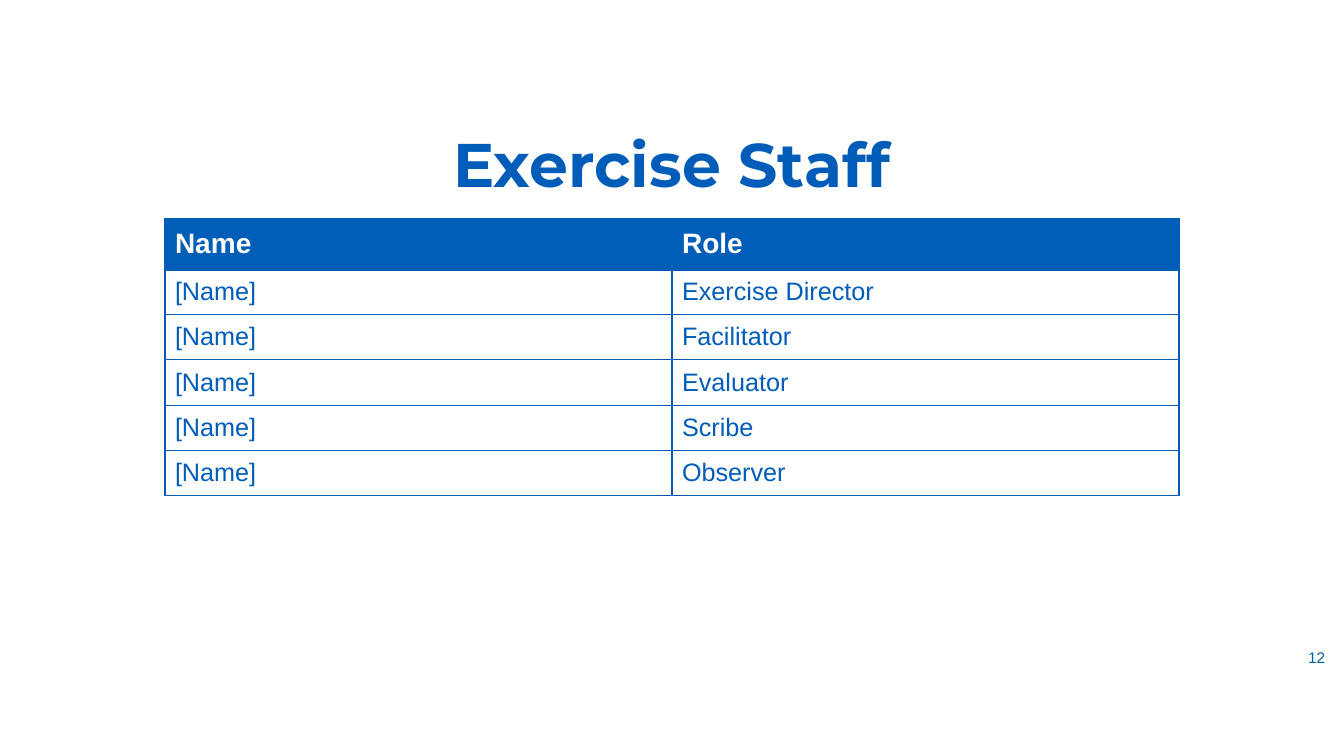
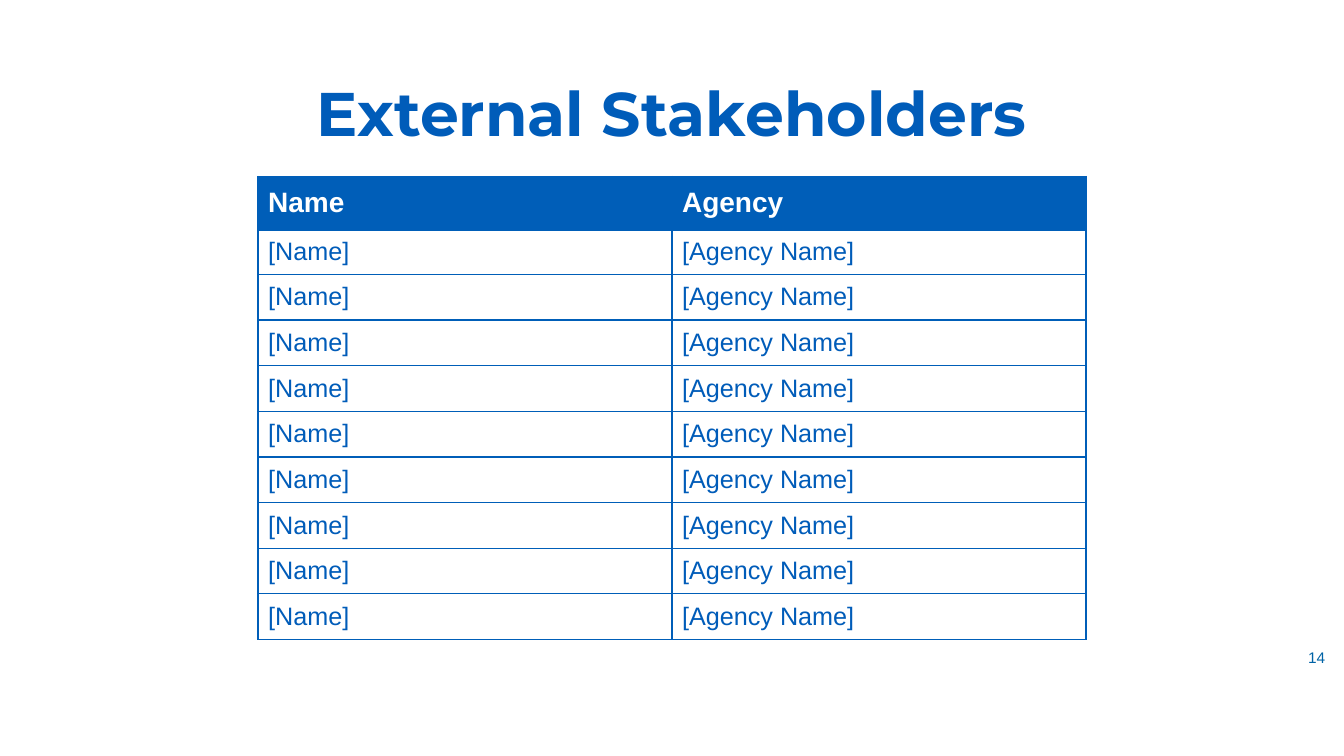
import pptx
import pptx.util
import pptx.dml.color
import pptx.enum.text
import pptx.oxml
import pptx.oxml.ns

Pt = pptx.util.Pt
Align = pptx.enum.text.PP_ALIGN
Anchor = pptx.enum.text.MSO_ANCHOR
WIDE, HIGH = 960, 540
HUES = {"line": "005EB8", "text": "005CB9", "page": "0063A6", "white": "FFFFFF"}


def hue(name):
    return pptx.dml.color.RGBColor.from_string(HUES[name])


class Deck:
    """Holds the shared style and the current slide."""

    head, body = "Montserrat", "Arial"

    def __init__(self):
        self.file = pptx.Presentation()
        self.file.slide_width, self.file.slide_height = Pt(WIDE), Pt(HIGH)
        self.slide = None

    def font(self, para, name, size, color, bold=False):
        font = para.font
        font.name, font.size, font.bold = name, Pt(size), bold
        font.color.rgb = hue(color)

    # New slide with its title and page number
    def start(self, title, top, high, page):
        self.slide = self.file.slides.add_slide(self.file.slide_layouts[5])
        box = self.slide.shapes.title
        box.left, box.top, box.width, box.height = Pt(66), Pt(top), Pt(828), Pt(high)
        para = self.fill(box.text_frame, title)
        para.line_spacing = 0.9
        self.font(para, self.head, 44, "text", True)
        self.number(page)

    def number(self, page):
        box = self.slide.shapes.add_textbox(Pt(921), Pt(454.5), Pt(39), Pt(29.5))
        para = self.fill(box.text_frame, str(page))
        self.font(para, self.body, 11, "page")

    def fill(self, frame, text):
        frame.text = text
        frame.word_wrap = True
        frame.auto_size = pptx.enum.text.MSO_AUTO_SIZE.NONE
        frame.vertical_anchor = Anchor.MIDDLE
        para = frame.paragraphs[0]
        para.alignment = Align.CENTER
        return para

    # Table centred across the slide, first row as header
    def table(self, rows, top, wide, first, step):
        count = len(rows[0])
        high = first + step * (len(rows) - 1)
        grid = self.slide.shapes.add_table(
            len(rows), count, Pt((WIDE - wide) / 2), Pt(top), Pt(wide), Pt(high)).table
        for col in grid.columns:
            col.width = Pt(wide / count)
        for i, row in enumerate(rows):
            grid.rows[i].height = Pt(step if i else first)
            for j, text in enumerate(row):
                self.cell(grid.cell(i, j), text, i)

    def cell(self, cell, text, row):
        is_head = row == 0
        self.edge(cell, top=3 if row == 1 else 1, base=3 if is_head else 1)
        cell.fill.solid()
        cell.fill.fore_color.rgb = hue("line" if is_head else "white")
        cell.vertical_anchor = Anchor.MIDDLE
        cell.text = text
        size, color = (20, "white") if is_head else (18, "text")
        self.font(cell.text_frame.paragraphs[0], self.body, size, color, is_head)

    def edge(self, cell, top, base):
        props = cell._tc.get_or_add_tcPr()
        for side, width in (("L", 1), ("R", 1), ("T", top), ("B", base)):
            props.append(pptx.oxml.parse_xml(
                f'<a:ln{side} {pptx.oxml.ns.nsdecls("a")} w="{Pt(width)}">'
                f'<a:solidFill><a:srgbClr val="{HUES["line"]}"/></a:solidFill>'
                f'</a:ln{side}>'))


def main():
    deck = Deck()

    # Exercise staff
    deck.start("Exercise Staff", 83.5, 72.7, 12)
    roles = ["Exercise Director", "Facilitator", "Evaluator", "Scribe", "Observer"]
    rows = [("Name", "Role")] + [("[Name]", role) for role in roles]
    deck.table(rows, top=156.2, wide=724.4, first=36, step=32.4)

    # External stakeholders
    deck.start("External Stakeholders", 31, 104.4, 14)
    rows = [("Name", "Agency")] + [("[Name]", "[Agency Name]")] * 9
    deck.table(rows, top=126, wide=591.4, first=37.4, step=32.6)

    deck.file.save("out.pptx")


if __name__ == "__main__":
    main()
